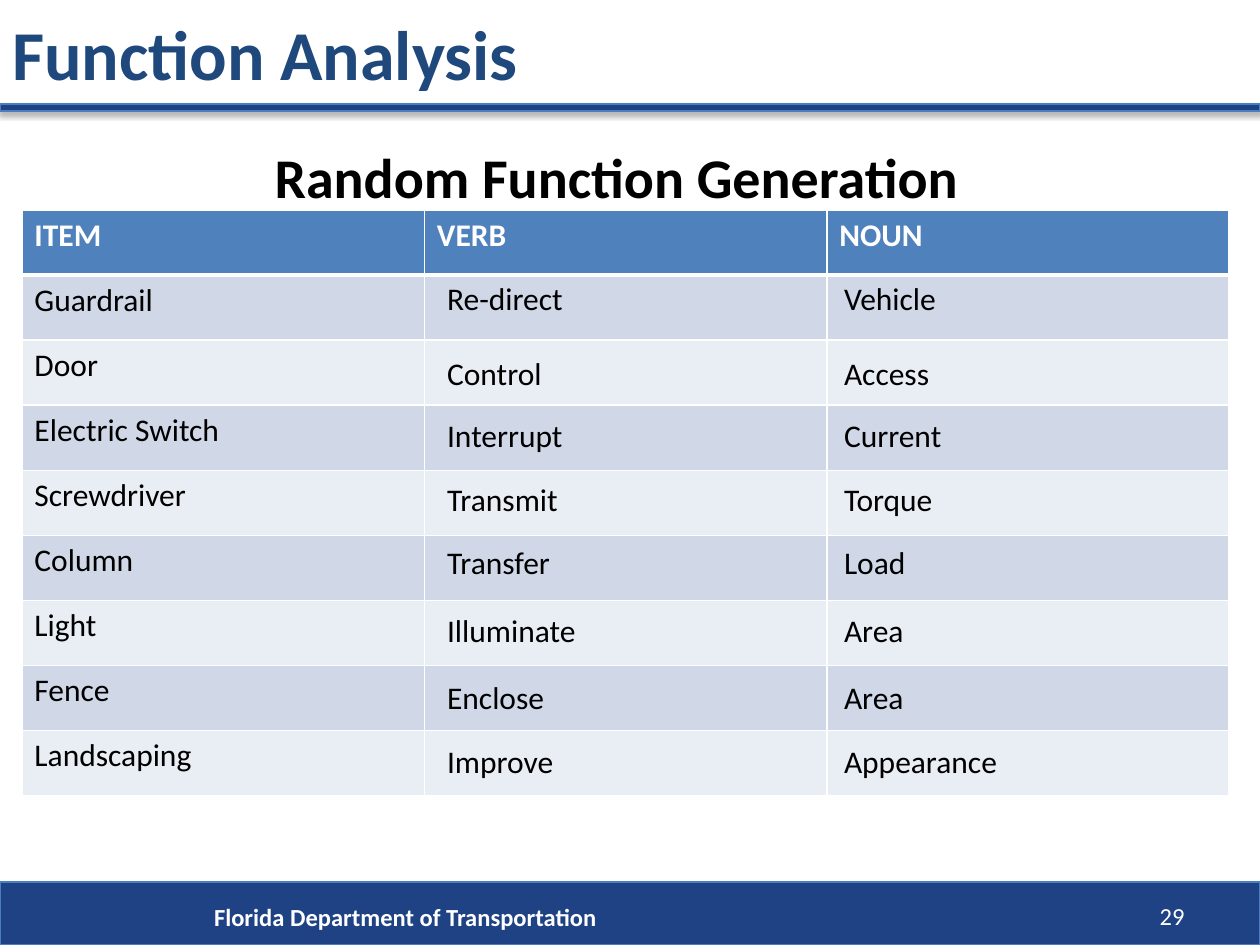
from dataclasses import dataclass, field
from typing import NamedTuple

from lxml import etree
from pptx import Presentation
from pptx.dml.color import RGBColor
from pptx.enum.shapes import MSO_SHAPE
from pptx.enum.text import MSO_ANCHOR, PP_ALIGN
from pptx.oxml.ns import qn
from pptx.util import Pt

RECTANGLE = MSO_SHAPE.RECTANGLE
TOP, MIDDLE = MSO_ANCHOR.TOP, MSO_ANCHOR.MIDDLE
LEFT, RIGHT = PP_ALIGN.LEFT, PP_ALIGN.RIGHT
BORDER_SIDES = ("lnL", "lnR", "lnT", "lnB")


@dataclass(frozen=True)
class Theme:
    font: str = "Calibri"
    navy: str = "1F4284"
    bar_edge: str = "4B7EBC"
    title: str = "1F497D"
    header: str = "4F81BD"
    bands: tuple[str, str] = ("D0D8E8", "E9EDF4")
    white: str = "FFFFFF"
    black: str = "000000"
    title_size: float = 40
    subtitle_size: float = 32
    body_size: float = 18
    footer_size: float = 14


THEME = Theme()


class Box(NamedTuple):
    left: float
    top: float
    width: float
    height: float

    def in_points(self) -> list[int]:
        return [Pt(length) for length in self]


class FunctionRow(NamedTuple):
    item: str
    verb: str
    noun: str
    answer_top: float


@dataclass(frozen=True)
class Label:
    text: str
    box: Box
    size: float = THEME.body_size
    color: str = THEME.black
    bold: bool = False
    paragraph: dict = field(default_factory=lambda: {"alignment": LEFT})
    anchor: MSO_ANCHOR = TOP


BARS = [Box(0, 504, 720, 36), Box(0, 59.5, 720, 4)]
TABLE_BOX = Box(12.5, 120, 690, 334.8)
HEADINGS = ("ITEM", "VERB", "NOUN")
VERB_LEFT, NOUN_LEFT = 248.4, 475.2
ANSWER_WIDTH, ANSWER_HEIGHT = 203, 30

FUNCTIONS = [
    FunctionRow("Guardrail", "Re-direct", "Vehicle", 156.2),
    FunctionRow("Door", "Control", "Access", 198.7),
    FunctionRow("Electric Switch", "Interrupt", "Current", 234),
    FunctionRow("Screwdriver", "Transmit", "Torque", 270.7),
    FunctionRow("Column", "Transfer", "Load", 306.7),
    FunctionRow("Light", "Illuminate", "Area", 345.6),
    FunctionRow("Fence", "Enclose", "Area", 383.8),
    FunctionRow("Landscaping", "Improve", "Appearance", 420.5),
]

LABELS = [
    Label("Florida Department of Transportation", Box(115.2, 512, 574.6, 24.5),
          THEME.footer_size, THEME.white, True),
    Label("29", Box(516.2, 510.5, 167.8, 26), THEME.footer_size, THEME.white,
          paragraph={"alignment": RIGHT}, anchor=MIDDLE),
    Label("Random Function Generation", Box(149.8, 78, 414, 54),
          THEME.subtitle_size, bold=True),
    Label("Function Analysis", Box(0, 0, 694.8, 60), THEME.title_size,
          THEME.title, True, anchor=MIDDLE),
]


def rgb(color: str) -> RGBColor:
    return RGBColor.from_string(color)


def set_all(target, values: dict) -> None:
    for name, value in values.items():
        setattr(target, name, value)


def style_font(font, size: float, color: str, bold: bool) -> None:
    set_all(font, {"name": THEME.font, "size": Pt(size), "bold": bold})
    font.color.rgb = rgb(color)


def add_color(parent, color: str):
    return etree.SubElement(parent, qn("a:srgbClr"), val=color)


def draw_bar(slide, box: Box) -> None:
    """Draw a navy band with a soft shadow straight below it."""
    bar = slide.shapes.add_shape(RECTANGLE, *box.in_points())
    bar.fill.solid()
    bar.fill.fore_color.rgb = rgb(THEME.navy)
    bar.line.color.rgb = rgb(THEME.bar_edge)
    bar.line.width = Pt(0.75)
    bar.shadow.inherit = False
    effects = bar._element.spPr.find(qn("a:effectLst"))
    shadow = etree.SubElement(
        effects, qn("a:outerShdw"), blurRad=str(Pt(3.1)), dist=str(Pt(1.8)),
        dir="5400000", rotWithShape="0")
    etree.SubElement(add_color(shadow, THEME.black), qn("a:alpha"), val="35000")


def draw_label(slide, label: Label) -> None:
    frame = slide.shapes.add_textbox(*label.box.in_points()).text_frame
    set_all(frame, {"word_wrap": True, "vertical_anchor": label.anchor})
    paragraph = frame.paragraphs[0]
    set_all(paragraph, label.paragraph)
    run = paragraph.add_run()
    run.text = label.text
    style_font(run.font, label.size, label.color, label.bold)


def set_borders(cell, widths: dict[str, float]) -> None:
    """Put white borders before the fill, where the schema wants them."""
    properties = cell._tc.get_or_add_tcPr()
    for position, side in enumerate(BORDER_SIDES):
        border = etree.Element(qn(f"a:{side}"), w=str(Pt(widths.get(side, 1))))
        add_color(etree.SubElement(border, qn("a:solidFill")), THEME.white)
        properties.insert(position, border)


def fill_cell(cell, text: str, fill: str, color: str, bold: bool,
              widths: dict[str, float]) -> None:
    cell.fill.solid()
    cell.fill.fore_color.rgb = rgb(fill)
    set_borders(cell, widths)
    paragraph = cell.text_frame.paragraphs[0]
    if text:
        run = paragraph.add_run()
        run.text = text
        style_font(run.font, THEME.body_size, color, bold)


def draw_function_table(slide) -> None:
    """Draw the grid; verbs and nouns are laid over it as separate labels."""
    table = slide.shapes.add_table(
        len(FUNCTIONS) + 1, len(HEADINGS), *TABLE_BOX.in_points()).table
    for column, heading in enumerate(HEADINGS):
        fill_cell(table.cell(0, column), heading, THEME.header, THEME.white,
                  True, {"lnB": 3})
        for row, function in enumerate(FUNCTIONS, start=1):
            fill_cell(table.cell(row, column),
                      function.item if column == 0 else "",
                      THEME.bands[(row - 1) % 2], THEME.black, False,
                      {"lnT": 3} if row == 1 else {})


def draw_answers(slide, function: FunctionRow) -> None:
    for text, left in ((function.verb, VERB_LEFT), (function.noun, NOUN_LEFT)):
        box = Box(left, function.answer_top, ANSWER_WIDTH, ANSWER_HEIGHT)
        draw_label(slide, Label(text, box))


def main() -> None:
    deck = Presentation()
    set_all(deck, {"slide_width": Pt(720), "slide_height": Pt(540)})
    slide = deck.slides.add_slide(deck.slide_layouts[6])
    for bar in BARS:
        draw_bar(slide, bar)
    draw_function_table(slide)
    for label in LABELS:
        draw_label(slide, label)
    for function in FUNCTIONS:
        draw_answers(slide, function)
    deck.save("out.pptx")


if __name__ == "__main__":
    main()
